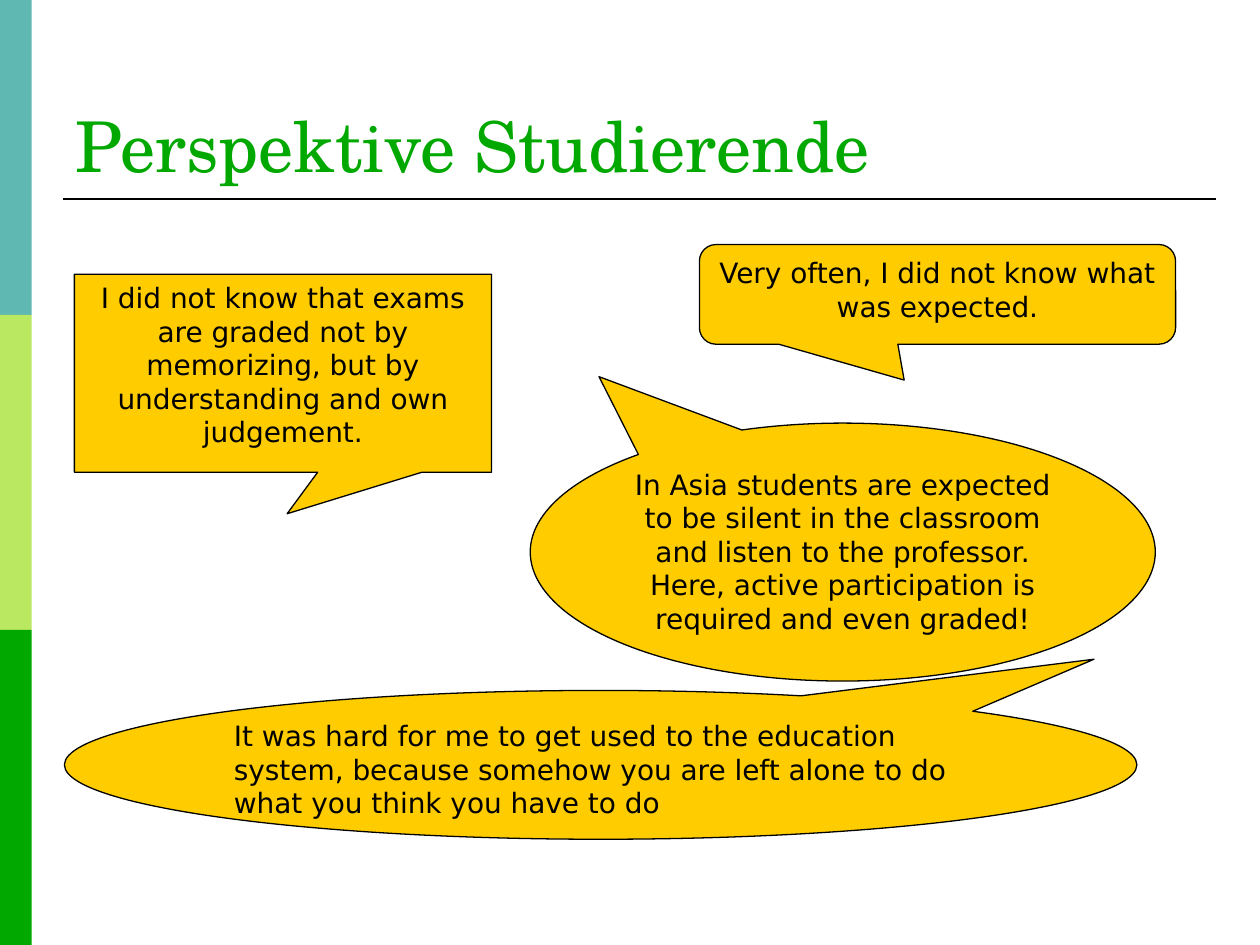
import pptx
import pptx.dml.color
import pptx.enum.shapes
import pptx.enum.text
import pptx.oxml
import pptx.util

Cm = pptx.util.Cm
SHAPE = pptx.enum.shapes.MSO_SHAPE
ALIGN = pptx.enum.text.PP_ALIGN
ANCHOR = pptx.enum.text.MSO_ANCHOR

COLORS = {"teal": "5FB8B2", "lime": "BAE860", "green": "00A800",
          "yellow": "FFCC00", "black": "000000"}
TITLE = {"name": "TeX Gyre Schola", "size": pptx.util.Pt(40)}
BODY = {"name": "DejaVu Sans", "size": pptx.util.Pt(16)}


def rgb(name):
    return pptx.dml.color.RGBColor.from_string(COLORS[name])


class SlideBuilder:
    """Holds the current slide and the style shared by its elements."""

    def __init__(self, prs):
        self.s = prs.slides.add_slide(prs.slide_layouts[6])

    def set_text(self, sp, text, font, color, align, anchor):
        tf = sp.text_frame
        tf.word_wrap = True
        tf.vertical_anchor = anchor
        p = tf.paragraphs[0]
        p.alignment = align
        r = p.add_run()
        r.text = text
        for key, value in font.items():
            setattr(r.font, key, value)
        r.font.color.rgb = rgb(color)

    def shape(self, kind, box, fill):
        sp = self.s.shapes.add_shape(kind, *map(Cm, box))
        sp.shadow.inherit = False
        sp.fill.solid()
        sp.fill.fore_color.rgb = rgb(fill)
        sp.line.fill.background()
        return sp

    def rule(self, x1, x2, y):
        line = self.s.shapes.add_connector(
            pptx.enum.shapes.MSO_CONNECTOR.STRAIGHT, Cm(x1), Cm(y), Cm(x2), Cm(y))
        line.line.color.rgb = rgb("black")
        line.line.width = pptx.util.Pt(1.5)
        line._element.spPr.append(pptx.oxml.parse_xml(
            '<a:effectLst xmlns:a="http://schemas.openxmlformats.org/drawingml/2006/main"/>'))

    def title(self, box, text):
        sp = self.s.shapes.add_textbox(*map(Cm, box))
        self.set_text(sp, text, TITLE, "green", ALIGN.LEFT, ANCHOR.BOTTOM)

    def callout(self, kind, box, tail, text, align=ALIGN.CENTER):
        """Add a speech bubble; tail is the tip's offset from the centre."""
        sp = self.shape(kind, box, "yellow")
        for i, value in enumerate(tail):
            sp.adjustments[i] = value
        sp.line.color.rgb = rgb("black")
        sp.line.width = pptx.util.Pt(0.75)
        self.set_text(sp, text, BODY, "black", align, ANCHOR.TOP)


def main():
    prs = pptx.Presentation()
    prs.slide_width, prs.slide_height = Cm(25.4), Cm(19.05)
    slide = SlideBuilder(prs)

    bar_height = 19.05 / 3
    for i, color in enumerate(("teal", "lime", "green")):
        slide.shape(SHAPE.RECTANGLE, (0, i * bar_height, 0.64, bar_height), color)
    slide.rule(1.27, 24.51, 4.01)
    slide.title((1.27, 0.71, 23.24, 3.18), "Perspektive Studierende")

    slide.callout(SHAPE.ROUNDED_RECTANGULAR_CALLOUT, (14.1, 4.93, 9.6, 2.01),
                  (-0.07, 0.86),
                  "Very often, I did not know what was expected.")
    slide.callout(SHAPE.OVAL_CALLOUT, (1.3, 13.92, 21.62, 3), (0.46, -0.71),
                  "It was hard for me to get used to the education system, "
                  "because somehow you are left alone to do what you think "
                  "you have to do", ALIGN.LEFT)
    slide.callout(SHAPE.RECTANGULAR_CALLOUT, (1.5, 5.53, 8.41, 3.99), (0.01, 0.71),
                  "I did not know that exams are graded not by memorizing, "
                  "but by understanding and own judgement.")
    slide.callout(SHAPE.OVAL_CALLOUT, (10.69, 8.53, 12.6, 5.2), (-0.39, -0.68),
                  "In Asia students are expected to be silent in the classroom "
                  "and listen to the professor. Here, active participation is "
                  "required and even graded!")
    prs.save("out.pptx")


if __name__ == "__main__":
    main()
